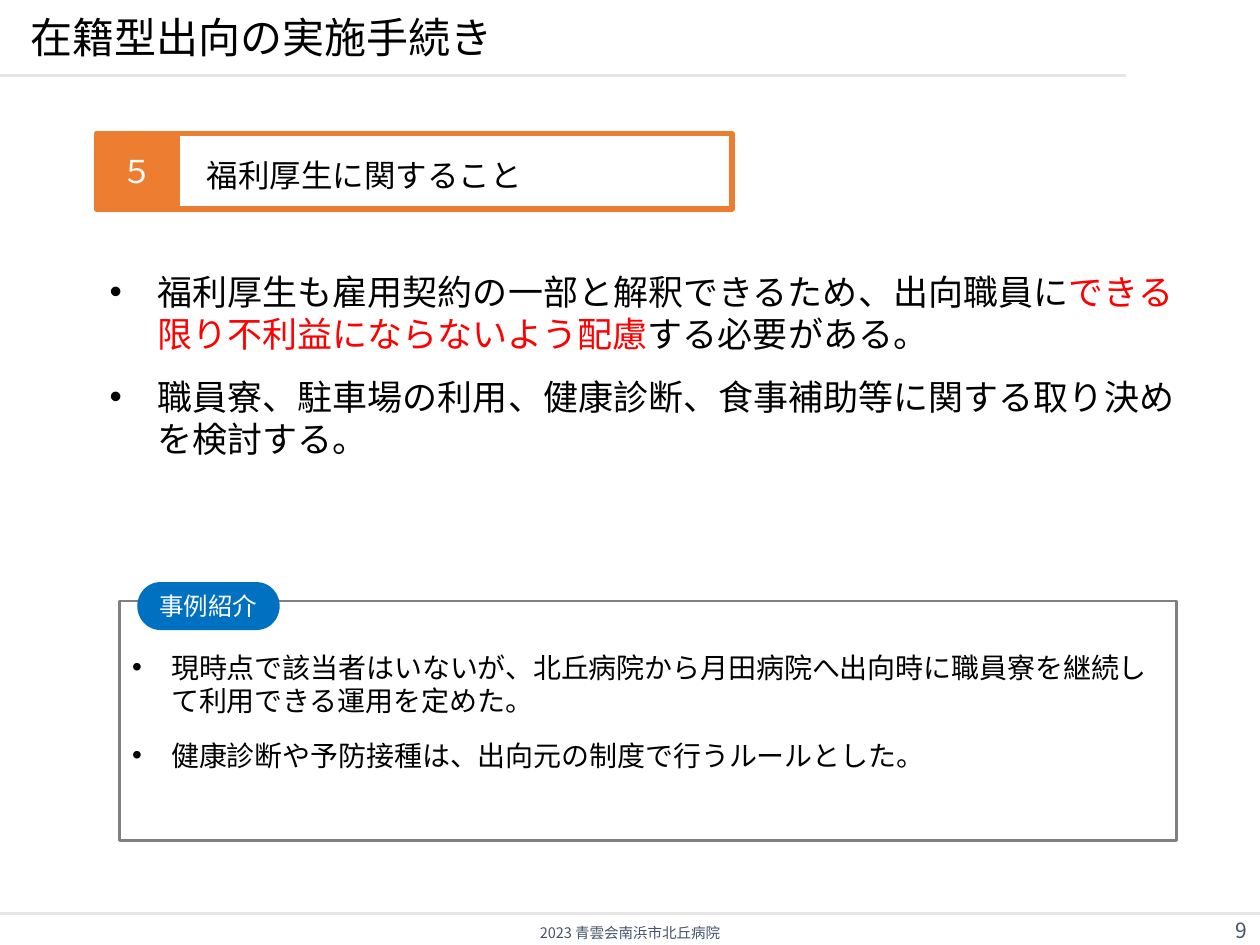
from lxml import etree
from pptx import Presentation
from pptx.dml.color import RGBColor
from pptx.enum.shapes import MSO_CONNECTOR, MSO_SHAPE
from pptx.enum.text import MSO_ANCHOR, MSO_AUTO_SIZE, PP_ALIGN
from pptx.oxml.ns import qn
from pptx.util import Inches, Pt

LEFT, CENTER, RIGHT = PP_ALIGN.LEFT, PP_ALIGN.CENTER, PP_ALIGN.RIGHT
TOP, MIDDLE, BOTTOM = MSO_ANCHOR.TOP, MSO_ANCHOR.MIDDLE, MSO_ANCHOR.BOTTOM
RECTANGLE, TERMINATOR = MSO_SHAPE.RECTANGLE, MSO_SHAPE.FLOWCHART_TERMINATOR
STRAIGHT, NO_AUTOFIT = MSO_CONNECTOR.STRAIGHT, MSO_AUTO_SIZE.NONE

COLORS = {
    "ink": "000000", "paper": "FFFFFF", "rule": "E7E6E6", "footer": "44546A",
    "section": "ED7D31", "warning": "FF0000", "frame": "808080", "case": "0070C0",
}
HEADING_FONT, LIST_FONT = "Noto Sans CJK JP", "Calibri"
COLUMNS, ROWS = 100, 75


class SlideBuilder:
    """Holds the style and the current slide, placing elements on a grid of columns and rows."""

    def __init__(self):
        self.deck = Presentation()
        self.deck.slide_width, self.deck.slide_height = Inches(10), Inches(7.5)
        self.slide = self.deck.slides.add_slide(self.deck.slide_layouts[1])

    def x(self, columns):
        return round(self.deck.slide_width * columns / COLUMNS)

    def y(self, rows):
        return round(self.deck.slide_height * rows / ROWS)

    def area(self, left, top, width, height):
        return self.x(left), self.y(top), self.x(width), self.y(height)

    def color(self, name):
        return RGBColor.from_string(COLORS[name])

    def bullet(self, paragraph, indent):
        properties = paragraph._p.get_or_add_pPr()
        properties.set("marL", str(self.x(indent)))
        properties.set("indent", str(-self.x(indent)))
        etree.SubElement(properties, qn("a:buFont"), typeface="Arial")
        etree.SubElement(properties, qn("a:buChar"), char="•")

    def set_text(self, holder, paragraphs, size, color="ink", font=HEADING_FONT, align=LEFT,
                 anchor=MIDDLE, insets=(1, 0.5, 1, 0.5), indent=0, after=0):
        frame = holder.text_frame
        left, top, right, bottom = insets
        layout = {
            "word_wrap": True, "auto_size": NO_AUTOFIT, "vertical_anchor": anchor,
            "margin_left": self.x(left), "margin_top": self.y(top),
            "margin_right": self.x(right), "margin_bottom": self.y(bottom),
        }
        for name, value in layout.items():
            setattr(frame, name, value)
        spacing = {"alignment": align, "space_before": Pt(0), "space_after": Pt(after)}
        for index, pieces in enumerate(paragraphs):
            paragraph = frame.add_paragraph() if index else frame.paragraphs[0]
            if indent:
                self.bullet(paragraph, indent)
            for name, value in spacing.items():
                setattr(paragraph, name, value)
            for words, piece_color in pieces:
                run = paragraph.add_run()
                run.text = words
                for name, value in {"name": font, "size": Pt(size), "bold": False}.items():
                    setattr(run.font, name, value)
                run.font.color.rgb = self.color(piece_color or color)
                etree.SubElement(run._r.get_or_add_rPr(), qn("a:ea"), typeface=font)

    def placeholder(self, index, area, paragraphs, **style):
        holder = self.slide.placeholders[index]
        holder.left, holder.top, holder.width, holder.height = self.area(*area)
        self.set_text(holder, paragraphs, **style)

    def label(self, area, words, **style):
        self.set_text(self.slide.shapes.add_textbox(*self.area(*area)), [[(words, None)]], **style)

    def box(self, kind, area, paragraphs, fill, outline=None, weight=0, **style):
        shape = self.slide.shapes.add_shape(kind, *self.area(*area))
        shape.shadow.inherit = False
        shape.fill.solid()
        shape.fill.fore_color.rgb = self.color(fill)
        if outline:
            shape.line.color.rgb = self.color(outline)
            shape.line.width = Pt(weight)
        else:
            shape.line.fill.background()
        self.set_text(shape, paragraphs, **style)

    def rule(self, row, width):
        line = self.slide.shapes.add_connector(
            STRAIGHT, 0, self.y(row), self.x(width), self.y(row))
        line.line.color.rgb = self.color("rule")
        line.line.width = Pt(1.5)
        etree.SubElement(line._element.spPr, qn("a:effectLst"))


def main():
    page = SlideBuilder()
    page.rule(6, 89.4)
    page.rule(72.5, COLUMNS)
    page.label((0, 72.6, COLUMNS, 2.9), "2023 青雲会南浜市北丘病院",
               size=8.3, color="footer", align=CENTER)
    page.label((79.2, 72.6, 20.8, 2.5), "9", size=12, color="footer", align=RIGHT)
    page.placeholder(0, (1.4, 1.1, 80.4, 3.8), [[("在籍型出向の実施手続き", None)]],
                     size=24, anchor=BOTTOM, insets=(1, 0.5, 1, 0))

    section_left, section_top, section_height = 7.7, 10.6, 6
    section = {"outline": "section", "weight": 3, "size": 18}
    page.box(RECTANGLE, (section_left, section_top, 50.4, section_height),
             [[("福利厚生に関すること", None)]], "paper", insets=(8.7, 0.5, 1, 0), **section)
    page.box(RECTANGLE, (section_left, section_top, 6.4, section_height),
             [[("５", None)]], "section", color="paper", align=CENTER,
             insets=(0.4, 0.4, 0.4, 0.4), **section)

    bullets = {"font": LIST_FONT, "anchor": TOP, "after": 12}
    principles = [
        [("福利厚生も雇用契約の一部と解釈できるため、出向職員に", None),
         ("できる限り不利益にならないよう配慮", "warning"),
         ("する必要がある。", None)],
        [("職員寮、駐車場の利用、健康診断、食事補助等に関する取り決めを検討する。", None)],
    ]
    page.placeholder(1, (section_left, 21.5, 87.6, 15.1), principles,
                     size=20, indent=3.8, insets=(1, 0, 1, 0), **bullets)

    case_examples = [
        [("現時点で該当者はいないが、北丘病院から月田病院へ出向時に職員寮を継続して利用できる運用を定めた。", None)],
        [("健康診断や予防接種は、出向元の制度で行うルールとした。", None)],
    ]
    page.box(RECTANGLE, (9.5, 47.7, 83.9, 19), case_examples, "paper", "frame", 1.5,
             size=16, indent=3.1, insets=(1, 3.9, 1, 0), **bullets)
    page.box(TERMINATOR, (10.9, 46.2, 11.3, 3.8), [[("事例紹介", None)]], "case",
             size=14, color="paper", align=CENTER, insets=(0, 0, 0, 0))
    page.deck.save("out.pptx")


if __name__ == "__main__":
    main()
